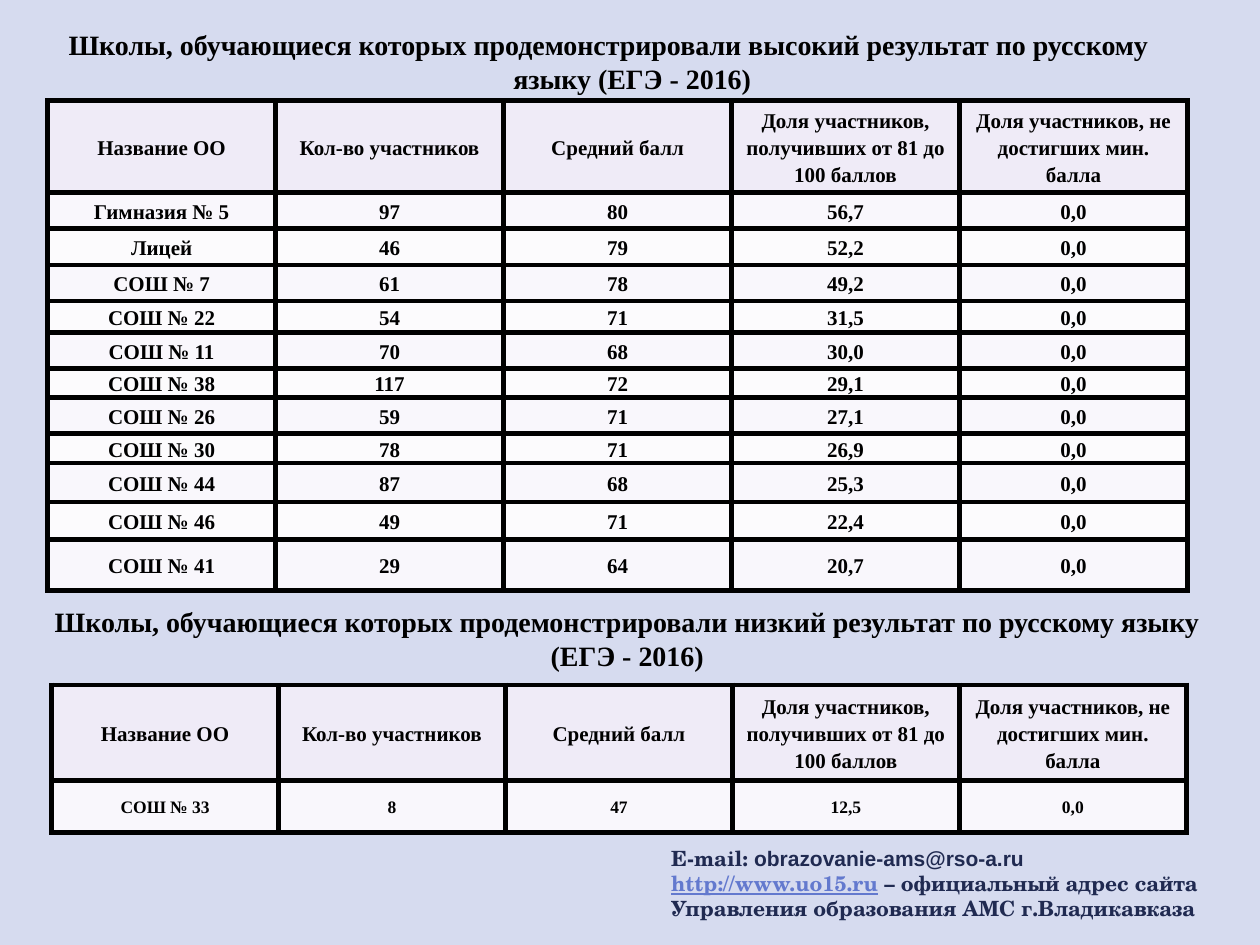
from lxml.etree import SubElement
from pptx import Presentation
from pptx.dml.color import RGBColor
from pptx.enum.text import MSO_ANCHOR as Anchor, MSO_AUTO_SIZE as AutoSize, PP_ALIGN as Align
from pptx.oxml.ns import qn
from pptx.util import Cm, Pt

BACKGROUND, BLACK, NAVY, LINK = "D6DBEF", "000000", "202A51", "6379CE"
HEADER_FILL, ODD_FILL, EVEN_FILL = "EFEBF7", "F9F7FC", "FCFBFD"
SERIF, SCHOOL, SANS = "Times New Roman", "TeX Gyre Schola", "Arial"

HEADERS = ["Название ОО", "Кол-во участников", "Средний балл",
           "Доля участников, получивших от 81 до 100 баллов",
           "Доля участников, не достигших мин. балла"]
HIGH_RESULTS = [
    ("Гимназия № 5", "97", "80", "56,7", "0,0"),
    ("Лицей", "46", "79", "52,2", "0,0"),
    ("СОШ № 7", "61", "78", "49,2", "0,0"),
    ("СОШ № 22", "54", "71", "31,5", "0,0"),
    ("СОШ № 11", "70", "68", "30,0", "0,0"),
    ("СОШ № 38", "117", "72", "29,1", "0,0"),
    ("СОШ № 26", "59", "71", "27,1", "0,0"),
    ("СОШ № 30", "78", "71", "26,9", "0,0"),
    ("СОШ № 44", "87", "68", "25,3", "0,0"),
    ("СОШ № 46", "49", "71", "22,4", "0,0"),
    ("СОШ № 41", "29", "64", "20,7", "0,0"),
]
HIGH_HEIGHTS = [1.85, 0.73, 0.73, 0.73, 0.63, 0.73, 0.58, 0.73, 0.58, 0.79, 0.75, 1.03]
LOW_RESULTS = [("СОШ № 33", "8", "47", "12,5", "0,0")]
LOW_HEIGHTS = [1.92, 1.05]


def rgb(color):
    return RGBColor.from_string(color)


def style_font(font, size, color=None, name=None):
    font.size, font.bold = Pt(size), True
    if name:
        font.name = name
    if color:
        font.color.rgb = rgb(color)


def add_text_box(slide, left, top, width, height):
    shape = slide.shapes.add_textbox(Cm(left), Cm(top), Cm(width), Cm(height))
    shape.text_frame.word_wrap = True
    return shape.text_frame


def add_heading(slide, text, left, top, width, height, hanging=0):
    paragraph = add_text_box(slide, left, top, width, height).paragraphs[0]
    paragraph.text = text
    paragraph.alignment = Align.CENTER
    if hanging:
        properties = paragraph._p.get_or_add_pPr()
        properties.set("marL", str(Cm(hanging)))
        properties.set("indent", str(-Cm(hanging)))
    style_font(paragraph.font, 16, BLACK, SERIF)


def add_borders(cell, color, width):
    properties = cell._tc.get_or_add_tcPr()
    for side in ("lnL", "lnR", "lnT", "lnB"):
        line = SubElement(properties, qn(f"a:{side}"), w=str(Pt(width)))
        fill = SubElement(line, qn("a:solidFill"))
        SubElement(fill, qn("a:srgbClr"), val=color)


def fill_cell(cell, text, fill, size, space_after):
    add_borders(cell, BLACK, 3)
    cell.fill.solid()
    cell.fill.fore_color.rgb = rgb(fill)
    cell.vertical_anchor = Anchor.MIDDLE
    cell.margin_left = cell.margin_right = Cm(0.18)
    cell.margin_top = cell.margin_bottom = 0
    paragraph = cell.text_frame.paragraphs[0]
    paragraph.text = text
    paragraph.alignment = Align.CENTER
    paragraph.line_spacing = 1.15
    paragraph.space_after = Pt(space_after)
    style_font(paragraph.font, size, BLACK, SERIF)


def add_results_table(slide, results, left, top, width, heights, size=12, space_after=0):
    """Header row plus one row per school; size and space_after apply to the schools."""
    frame = slide.shapes.add_table(len(heights), len(HEADERS), Cm(left), Cm(top),
                                   Cm(width), Cm(sum(heights)))
    table = frame.table
    table.first_row = table.horz_banding = False
    for column in table.columns:
        column.width = Cm(width / len(HEADERS))
    for index, (height, values) in enumerate(zip(heights, [HEADERS, *results])):
        table.rows[index].height = Cm(height)
        if index == 0:
            look = HEADER_FILL, 12, 0
        else:
            look = ODD_FILL if index % 2 else EVEN_FILL, size, space_after
        for cell, text in zip(table.rows[index].cells, values):
            fill_cell(cell, text, *look)


def add_contacts(slide, left, top, width, height):
    frame = add_text_box(slide, left, top, width, height)
    frame.auto_size = AutoSize.SHAPE_TO_FIT_TEXT
    lines = [
        [("E-mail: ", SCHOOL, NAVY), ("obrazovanie-ams@rso-a.ru", SANS, NAVY)],
        [("http://www.uo15.ru", SCHOOL, LINK),
         (" – официальный адрес сайта Управления образования АМС г.Владикавказа", SCHOOL, NAVY)],
    ]
    for index, runs in enumerate(lines):
        paragraph = frame.add_paragraph() if index else frame.paragraphs[0]
        style_font(paragraph.font, 12)
        for text, name, color in runs:
            run = paragraph.add_run()
            run.text = text
            run.font.name = name
            run.font.color.rgb = rgb(color)
            if color == LINK:
                run.font.underline = True


def main():
    presentation = Presentation()
    presentation.slide_width, presentation.slide_height = Cm(25.4), Cm(19.05)
    slide = presentation.slides.add_slide(presentation.slide_layouts[6])
    slide.background.fill.solid()
    slide.background.fill.fore_color.rgb = rgb(BACKGROUND)

    add_heading(slide, "Школы, обучающиеся которых продемонстрировали высокий результат "
                "по русскому языку (ЕГЭ - 2016)", 0.84, 0.43, 22.86, 12.57, hanging=0.95)
    add_results_table(slide, HIGH_RESULTS, 0.96, 2.03, 22.98, HIGH_HEIGHTS)
    add_results_table(slide, LOW_RESULTS, 1.04, 13.81, 22.88, LOW_HEIGHTS,
                      size=10, space_after=10)
    add_heading(slide, "Школы, обучающиеся которых продемонстрировали низкий результат "
                "по русскому языку (ЕГЭ - 2016)", 0.53, 12.07, 24.23, 1.62)
    add_contacts(slide, 13.28, 16.92, 11.84, 1.8)
    presentation.save("out.pptx")


if __name__ == "__main__":
    main()
